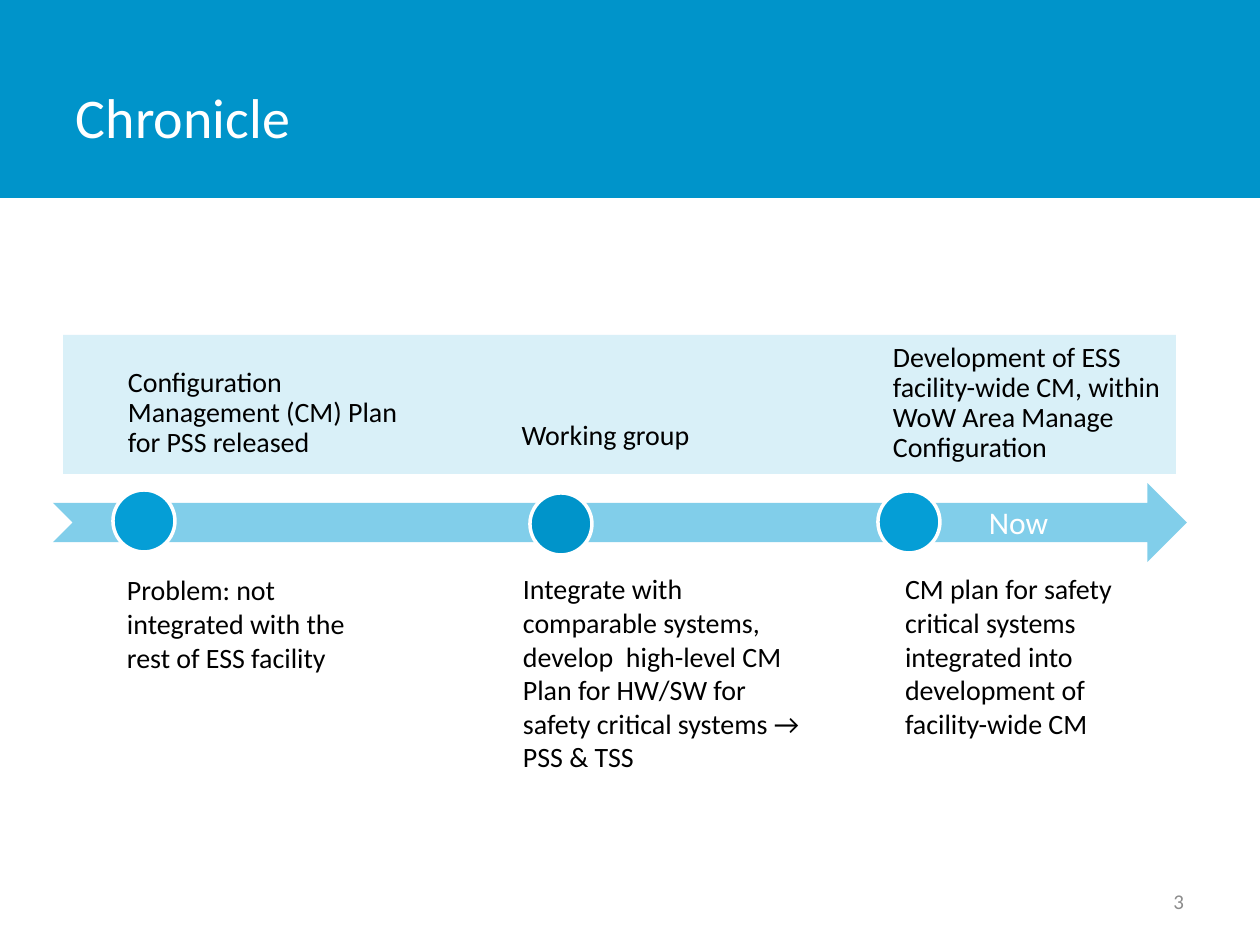
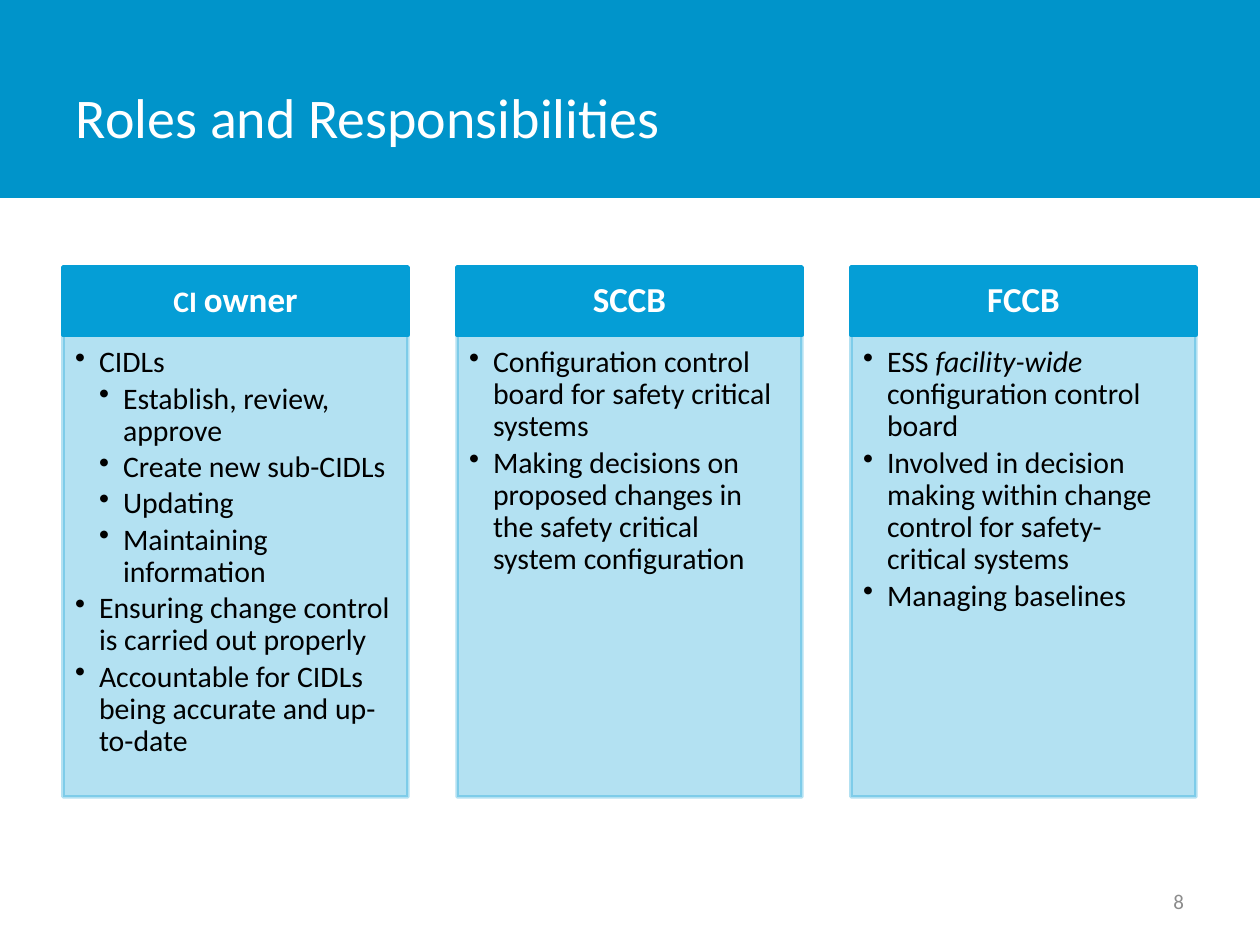
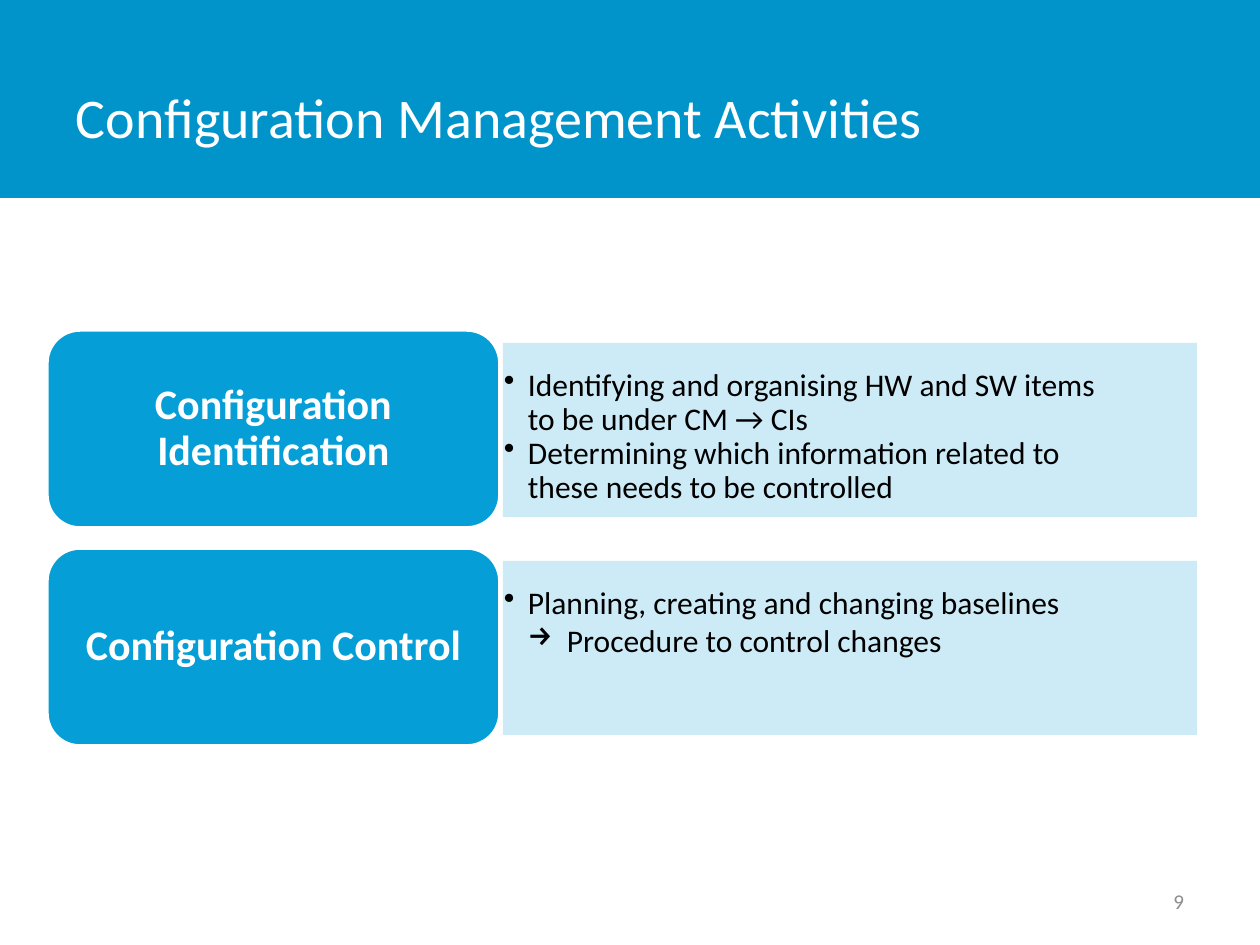
from collections import namedtuple

from lxml.etree import SubElement
from pptx import Presentation
from pptx.dml.color import RGBColor
from pptx.enum.shapes import MSO_SHAPE as Kind
from pptx.enum.text import MSO_ANCHOR as Anchor, MSO_AUTO_SIZE as Fit, PP_ALIGN as Align
from pptx.oxml.ns import qn
from pptx.util import Emu, Pt

# Shared look
FONT = "Calibri"
DEEP = RGBColor(0x00, 0x94, 0xCA)
BLUE = RGBColor(0x05, 0x9E, 0xD6)
WHITE = RGBColor(0xFF, 0xFF, 0xFF)
BLACK = RGBColor(0x00, 0x00, 0x00)
GRAY = RGBColor(0x8C, 0x8C, 0x8C)
PAD = (13, 6, 13, 6)
STEP = 24  # indent of one bullet level

Item = namedtuple("Item", "text level mark left hang", defaults=(0, "•", STEP, STEP))


def px(n):
    return Emu(round(n * 914400 / 126))


def sub(text):
    return Item(text, 1, left=2 * STEP)


def fade(fill, alpha):
    """Make a solid fill partly transparent; alpha is percent opaque."""
    tone = fill._xPr.find(qn("a:solidFill"))[0]
    SubElement(tone, qn("a:alpha"), val=str(alpha * 1000))


def write(shape, *paras, size=16, color=BLACK, bold=False, align=Align.LEFT,
          anchor=Anchor.TOP, pad=PAD, lead=1.0, gap=0):
    """Fill a shape with text; a paragraph is a string, a run list or an Item."""
    frame = shape.text_frame
    frame.word_wrap = True
    frame.auto_size = Fit.NONE
    frame.vertical_anchor = anchor
    (frame.margin_left, frame.margin_top,
     frame.margin_right, frame.margin_bottom) = map(px, pad)
    for i, para in enumerate(paras):
        line = frame.add_paragraph() if i else frame.paragraphs[0]
        line.alignment = align
        line.line_spacing = lead
        line.space_after = Pt(gap)
        if isinstance(para, Item):
            line.level = para.level
            props = line._p.get_or_add_pPr()
            props.set("marL", str(px(para.left)))
            props.set("indent", str(px(-para.hang)))
            SubElement(props, qn("a:buChar"), char=para.mark)
            para = para.text
        for text, style in [(para, {})] if isinstance(para, str) else para:
            run = line.add_run()
            run.text = text
            font = run.font
            font.name = FONT
            font.size = Pt(style.get("size", size))
            font.bold = bold
            font.italic = style.get("italic", False)
            font.color.rgb = color


def draw(slide, kind, box, fill=BLUE, alpha=100, edge=None):
    shape = slide.shapes.add_shape(kind, *map(px, box))
    shape.shadow.inherit = False
    shape.fill.solid()
    shape.fill.fore_color.rgb = fill
    if alpha < 100:
        fade(shape.fill, alpha)
    if edge is None:
        shape.line.fill.background()
    else:
        shape.line.color.rgb = edge
        shape.line.width = Pt(2)
        if edge == fill and alpha < 100:
            fade(shape.line.fill, alpha)
    return shape


def label(slide, box, text, **style):
    write(slide.shapes.add_textbox(*map(px, box)), text, **style)


def start(deck, title, number):
    """Add a slide with its title and number."""
    slide = deck.slides.add_slide(deck.slide_layouts[5])
    head = slide.shapes.title
    head.left, head.top, head.width, head.height = map(px, (63, 38, 984, 157))
    write(head, title, size=32, color=WHITE, anchor=Anchor.MIDDLE)
    label(slide, (903, 876, 294, 50), number, size=12, color=GRAY,
          align=Align.RIGHT, anchor=Anchor.MIDDLE)
    return slide


def band(slide):
    """Put the title band on the layout, behind everything."""
    bar = draw(slide, Kind.RECTANGLE, (0, 0, 1260, 198), DEEP)
    slide.slide_layout.shapes.element.insert(2, bar.element)


def dot(slide, left, top, fill):
    draw(slide, Kind.OVAL, (left, top, 62, 62), fill, edge=WHITE)


def column(slide, left, head, items):
    top = draw(slide, Kind.RECTANGLE, (left, 267, 345, 68), edge=BLUE)
    write(top, head, size=20, color=WHITE, bold=True, align=Align.CENTER,
          anchor=Anchor.MIDDLE, pad=(18, 10, 18, 10), lead=0.9)
    body = draw(slide, Kind.RECTANGLE, (left, 335, 345, 462), alpha=30, edge=BLUE)
    write(body, *items, size=17, pad=(12, 12, 16, 19), lead=0.9, gap=2.4)


def row(slide, top, head, items, gap):
    panel = draw(slide, Kind.RECTANGLE, (503, top + 13, 694, 174), alpha=20)
    write(panel, *items, size=18, pad=(1, 26, 76, 26), lead=0.9, gap=gap)
    card = draw(slide, Kind.ROUNDED_RECTANGLE, (47, top, 453, 198), edge=WHITE)
    write(card, head, size=24, color=WHITE, bold=True, align=Align.CENTER,
          anchor=Anchor.MIDDLE, pad=(23, 16, 23, 16), lead=0.9)


def history(deck):
    slide = start(deck, "Chronicle", "3")
    band(slide)
    draw(slide, Kind.RECTANGLE, (63, 335, 1113, 139), alpha=15)
    draw(slide, Kind.NOTCHED_RIGHT_ARROW, (53, 483, 1134, 79), alpha=50)

    # Events above the arrow
    events = [
        ((113, 338, 329, 136), "Configuration Management (CM) Plan for PSS released",
         Align.LEFT, Anchor.BOTTOM),
        ((441, 406, 329, 74), "Working group", Align.CENTER, Anchor.TOP),
        ((878, 324, 329, 155), "Development of ESS facility-wide CM, within "
         "WoW Area Manage Configuration", Align.LEFT, Anchor.BOTTOM),
    ]
    for box, text, align, anchor in events:
        label(slide, box, text, align=align, anchor=anchor,
              pad=(15, 15, 15, 15), lead=0.9)
    for left, top, fill in [(113, 490, BLUE), (530, 493, DEEP), (878, 491, BLUE)]:
        dot(slide, left, top, fill)

    # Details below the arrow
    details = [
        ((114, 567, 282, 152), "Problem: not integrated with the rest of ESS facility"),
        ((510, 566, 318, 251), "Integrate with comparable systems, develop  high-level "
         "CM Plan for HW/SW for safety critical systems → PSS & TSS"),
        ((892, 566, 284, 217), "CM plan for safety critical systems integrated into "
         "development of facility-wide CM"),
    ]
    for box, text in details:
        label(slide, box, text)
    label(slide, (976, 497, 100, 50), "Now", size=18, color=WHITE)


def roles(deck):
    slide = start(deck, "Roles and Responsibilities", "8")
    columns = [
        ([("CI ", {"size": 17}), ("owner", {})],
         [Item("CIDLs"), sub("Establish, review, approve"),
          sub("Create new sub-CIDLs"), sub("Updating"), sub("Maintaining information"),
          Item("Ensuring change control is carried out properly"),
          Item("Accountable for CIDLs being accurate and up-to-date")]),
        ("SCCB",
         [Item("Configuration control board for safety critical systems"),
          Item("Making decisions on proposed changes in the safety critical "
               "system configuration")]),
        ("FCCB",
         [Item([("ESS ", {}), ("facility-wide", {"italic": True}),
                (" configuration control board", {})]),
          Item("Involved in decision making within change control for "
               "safety-critical systems"),
          Item("Managing baselines")]),
    ]
    for i, (head, items) in enumerate(columns):
        column(slide, 63 + 394 * i, head, items)


def tasks(deck):
    slide = start(deck, "Configuration Management Activities", "9")
    rows = [
        ("Configuration Identification",
         [Item("Identifying and organising HW and SW items to be under CM → CIs"),
          Item("Determining which information related to these needs to be controlled")],
         0),
        ("Configuration Control",
         [Item("Planning, creating and changing baselines"),
          Item("Procedure to control changes", 1, "→", 63, 39)],
         2.5),
    ]
    for i, (head, items, gap) in enumerate(rows):
        row(slide, 330 + 218 * i, head, items, gap)


def main():
    deck = Presentation()
    deck.slide_width, deck.slide_height = px(1260), px(945)
    history(deck)
    roles(deck)
    tasks(deck)
    deck.save("out.pptx")


if __name__ == "__main__":
    main()
